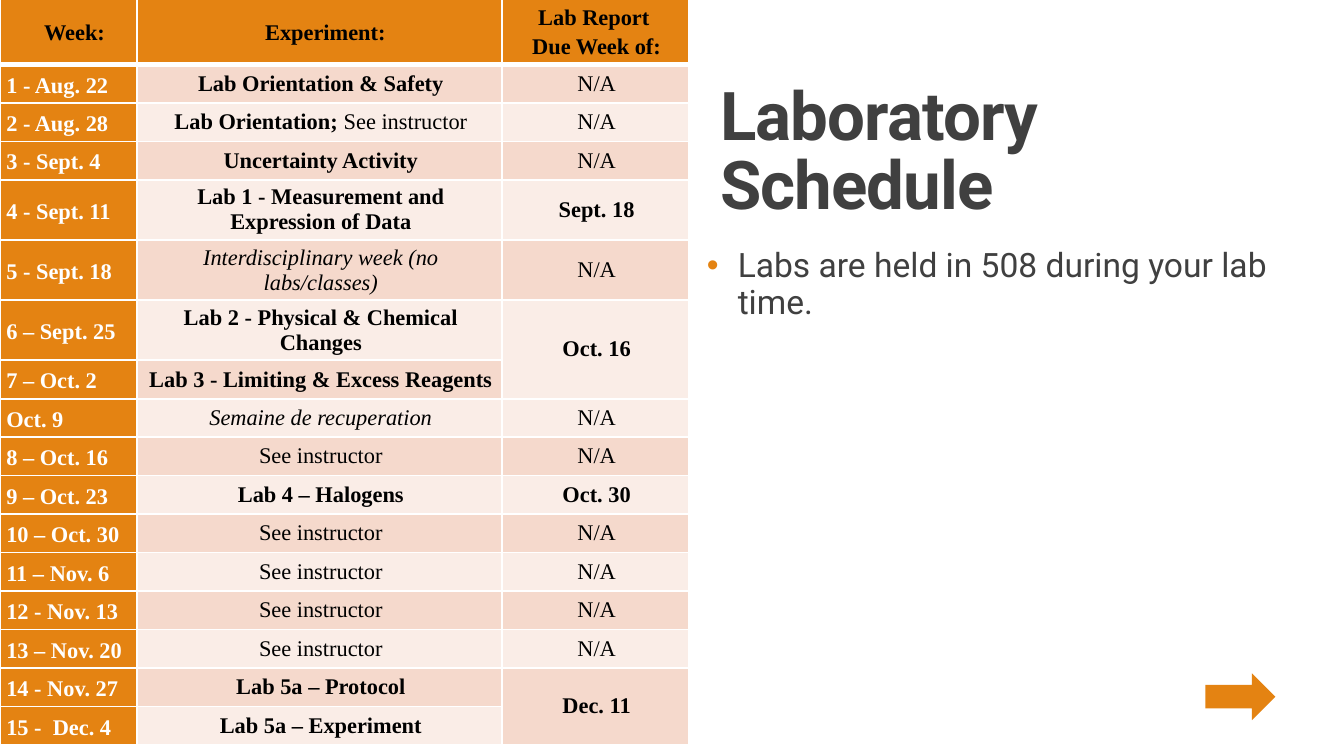
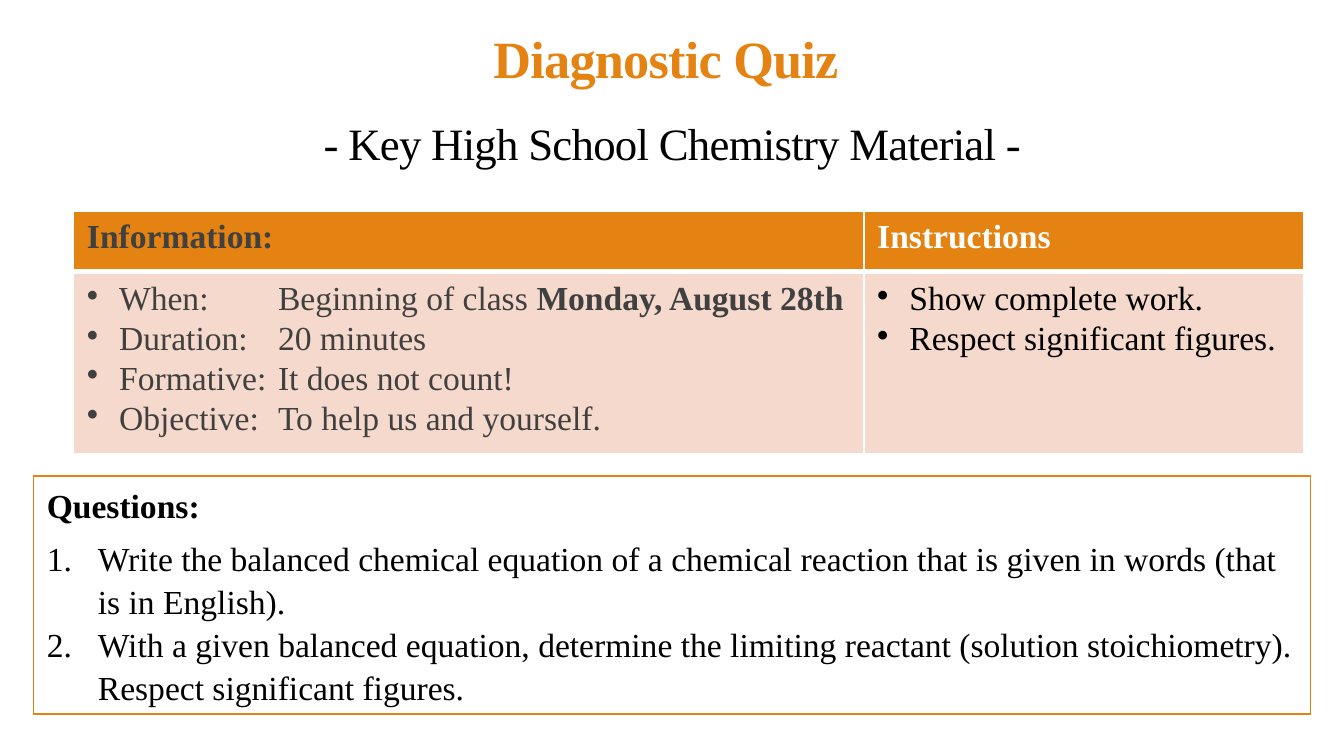
"""Build the lab schedule and diagnostic quiz slides."""
import pptx
import pptx.dml.color
import pptx.enum.shapes
import pptx.enum.text
import pptx.oxml.ns
import pptx.util
import lxml.etree

HUE = {"main": "E48312", "odd": "F5D9CC", "even": "FAEDE7",
       "dark": "404040", "ink": "000000", "pale": "FFFFFF"}
SERIF, SANS = "Times New Roman", "Roboto"
SCALE = 914400 / 192
Pt = pptx.util.Pt
RGB = pptx.dml.color.RGBColor.from_string
qn = pptx.oxml.ns.qn
ALIGN = pptx.enum.text.PP_ALIGN
ANCHOR = pptx.enum.text.MSO_ANCHOR
FIT = pptx.enum.text.MSO_AUTO_SIZE
SHAPE = pptx.enum.shapes.MSO_SHAPE


def px(*sizes):
    return [pptx.util.Emu(round(size * SCALE)) for size in sizes]


def write(par, text, size, hue="ink", bold=False, face=SERIF, space=1.0,
          after=0, mark=None, dent=0):
    """Fill a paragraph; each | in the text toggles bold."""
    font = par.font
    font.size, font.name, font.bold = Pt(size), face, bold
    font.color.rgb = RGB(HUE[hue])
    par.line_spacing = space
    par.space_before, par.space_after = Pt(0), Pt(after)
    for num, part in enumerate(text.split("|")):
        run = par.add_run()
        run.text = part
        if num % 2:
            run.font.bold = not bold
    if mark:
        props = par._p.get_or_add_pPr()
        props.set("marL", str(px(dent)[0]))
        props.set("indent", str(-px(dent)[0]))
        kind, key = ("buAutoNum", "type") if mark == "arabicPeriod" else ("buChar", "char")
        item = lxml.etree.Element(qn("a:" + kind))
        item.set(key, mark)
        props.insert_element_before(item, "a:tabLst", "a:defRPr", "a:extLst")


deck = pptx.Presentation()
deck.slide_width, deck.slide_height = px(1920, 1080)
plan = deck.slides.add_slide(deck.slide_layouts[1])
quiz = deck.slides.add_slide(deck.slide_layouts[5])

for slide, place in ((plan, (1010, 100, 866, 228)), (quiz, (168, 24, 1584, 228))):
    title = slide.shapes.title
    title.left, title.top, title.width, title.height = px(*place)
    title.text_frame.auto_size = FIT.NONE
    title.text_frame.vertical_anchor = ANCHOR.BOTTOM

par = plan.shapes.title.text_frame.paragraphs[0]
write(par, "Laboratory Schedule", 36, "dark", True, SANS, 0.85)
par.alignment = ALIGN.LEFT
par.font._rPr.set("spc", "-50")

par = quiz.shapes.title.text_frame.paragraphs[0]
write(par, "Diagnostic Quiz ", 28, "main", True, space=1.5, after=8)
par.alignment = ALIGN.CENTER
par.font._rPr.set("spc", "-40")
par.add_line_break()
run = par.add_run()
run.text = "- Key High School Chemistry Material -"
run.font.size, run.font.bold = Pt(24), False
run.font.color.rgb = RGB(HUE["ink"])

body = plan.placeholders[1]
body.left, body.top, body.width, body.height = px(1010, 346, 866, 353)
frame = body.text_frame
frame.auto_size = FIT.NONE
frame.margin_left = frame.margin_right = 0
par = frame.paragraphs[0]
write(par, "Labs are held in 508 during your lab time.", 18, "dark", face=SANS,
      space=0.9, after=6, mark="•", dent=44)
tint = lxml.etree.Element(qn("a:buClr"))
lxml.etree.SubElement(tint, qn("a:srgbClr")).set("val", HUE["main"])
par._p.pPr.find(qn("a:buChar")).addprevious(tint)

arrow = plan.shapes.add_shape(SHAPE.RIGHT_ARROW, *px(1722, 962, 100, 67))
arrow.shadow.inherit = False
arrow.fill.solid()
arrow.fill.fore_color.rgb = RGB(HUE["main"])
arrow.line.fill.background()

weeks = [
    ("Week:", "Experiment:", "Lab Report \nDue Week of:"),
    ("1 - Aug. 22", "Lab Orientation & Safety", "N/A"),
    ("2 - Aug. 28", "Lab Orientation; |See instructor", "N/A"),
    ("3 - Sept. 4", "Uncertainty Activity", "N/A"),
    ("4 - Sept. 11", "Lab 1 - Measurement and Expression of Data", "Sept. 18"),
    ("5 - Sept. 18", "Interdisciplinary week (no labs/classes)", "N/A"),
    ("6 – Sept. 25", "Lab 2 - Physical & Chemical Changes", "Oct. 16"),
    ("7 – Oct. 2", "Lab 3 - Limiting & Excess Reagents", ""),
    ("Oct. 9", "Semaine de recuperation", "N/A"),
    ("8 – Oct. 16", "See instructor", "N/A"),
    ("9 – Oct. 23", "Lab 4 – Halogens", "Oct. 30"),
    ("10 – Oct. 30", "See instructor", "N/A"),
    ("11 – Nov. 6", "See instructor", "N/A"),
    ("12 - Nov. 13", "See instructor", "N/A"),
    ("13 – Nov. 20", "See instructor", "N/A"),
    ("14 - Nov. 27", "Lab 5a – Protocol", "Dec. 11"),
    ("15 -  Dec. 4", "Lab 5a – Experiment", ""),
]
ital = ("Interdisciplinary week (no labs/classes)", "Semaine de recuperation")
light = ital + ("See instructor", "N/A")
tall = (4, 5, 6)
highs = [96] + [86 if row in tall else 55 for row in range(1, len(weeks))]
dates = plan.shapes.add_table(len(weeks), 3, *px(0, -4, 984, sum(highs))).table
for row, texts in enumerate(weeks):
    for col, text in enumerate(texts):
        cell = dates.cell(row, col)
        cell.vertical_anchor = ANCHOR.MIDDLE
        cell.margin_left, cell.margin_top, cell.margin_right, cell.margin_bottom = px(9, 6, 5, 6)
        for num, line in enumerate(text.split("\n")):
            par = cell.text_frame.add_paragraph() if num else cell.text_frame.paragraphs[0]
            side = row > 0 and col == 0
            write(par, line, 12, "pale" if side else "ink", text not in light,
                  space=1.15 if row == 0 or col == 0 else 1.0)
            par.alignment = ALIGN.LEFT if side else ALIGN.CENTER
            par.font.italic = text in ital
            if row == 0 and col < 2:
                par._p.pPr.set("marL", str(px(13)[0]))
for row in (6, 15):
    dates.cell(row, 2).merge(dates.cell(row + 1, 2))

facts = quiz.shapes.add_table(2, 2, *px(105, 302, 1758, 347)).table
cols = [
    ("Information:", "dark", "dark",
     ["When:\tBeginning of class |Monday, August 28th", "Duration: \t20 minutes",
      "Formative:\tIt does not count!", "Objective: \tTo help us and yourself."]),
    ("Instructions", "pale", "ink",
     ["Show complete work.", "Respect significant figures."]),
]
for col, (head, top, hue, lines) in enumerate(cols):
    write(facts.cell(0, col).text_frame.paragraphs[0], head, 18, top, True)
    facts.cell(1, col).margin_right = px(8)[0]
    frame = facts.cell(1, col).text_frame
    for num, line in enumerate(lines):
        par = frame.add_paragraph() if num else frame.paragraphs[0]
        write(par, line, 18, hue, space=1.07, after=5 if line == lines[-1] else 0,
              mark="•", dent=46)
        if "\t" in line:
            tabs = lxml.etree.Element(qn("a:tabLst"))
            stop = lxml.etree.SubElement(tabs, qn("a:tab"))
            stop.set("pos", str(px(273)[0]))
            stop.set("algn", "l")
            par._p.pPr.find(qn("a:buChar")).addnext(tabs)

for table, wides, tops in ((dates, (196, 521, 267), highs), (facts, (1129, 629), (86, 261))):
    for col, wide in zip(table.columns, px(*wides)):
        col.width = wide
    for row, high in zip(table.rows, px(*tops)):
        row.height = high
    for row in range(len(tops)):
        for col in range(len(wides)):
            cell = table.cell(row, col)
            side = table is dates and col == 0
            hue = "main" if row == 0 or side else "odd" if row % 2 else "even"
            cell.fill.solid()
            cell.fill.fore_color.rgb = RGB(HUE[hue])
            props = cell._tc.get_or_add_tcPr()
            for num, edge in enumerate("LRTB"):
                thick = (row, edge) in ((0, "B"), (1, "T"))
                line = lxml.etree.Element(qn("a:ln" + edge))
                line.set("w", str(Pt(3 if thick else 1)))
                fill = lxml.etree.SubElement(line, qn("a:solidFill"))
                lxml.etree.SubElement(fill, qn("a:srgbClr")).set("val", HUE["pale"])
                props.insert(num, line)

box = quiz.shapes.add_shape(SHAPE.RECTANGLE, *px(48, 680, 1824, 340))
box.shadow.inherit = False
box.fill.background()
box.line.color.rgb = RGB(HUE["main"])
box.line.width = Pt(0.75)
frame = box.text_frame
frame.word_wrap = True
frame.auto_size = FIT.SHAPE_TO_FIT_TEXT
frame.vertical_anchor = ANCHOR.TOP
par = frame.paragraphs[0]
write(par, "Questions:", 18, bold=True, space=1.07, after=5)
par.alignment = ALIGN.LEFT
tasks = [
    "Write the balanced chemical equation of a chemical reaction that is given in words "
    "(that is in English).",
    "With a given balanced equation, determine the limiting reactant (solution "
    "stoichiometry). Respect significant figures.",
]
for task in tasks:
    par = frame.add_paragraph()
    write(par, task, 18, space=1.07, mark="arabicPeriod", dent=73)
    par.alignment = ALIGN.LEFT

deck.save("out.pptx")
